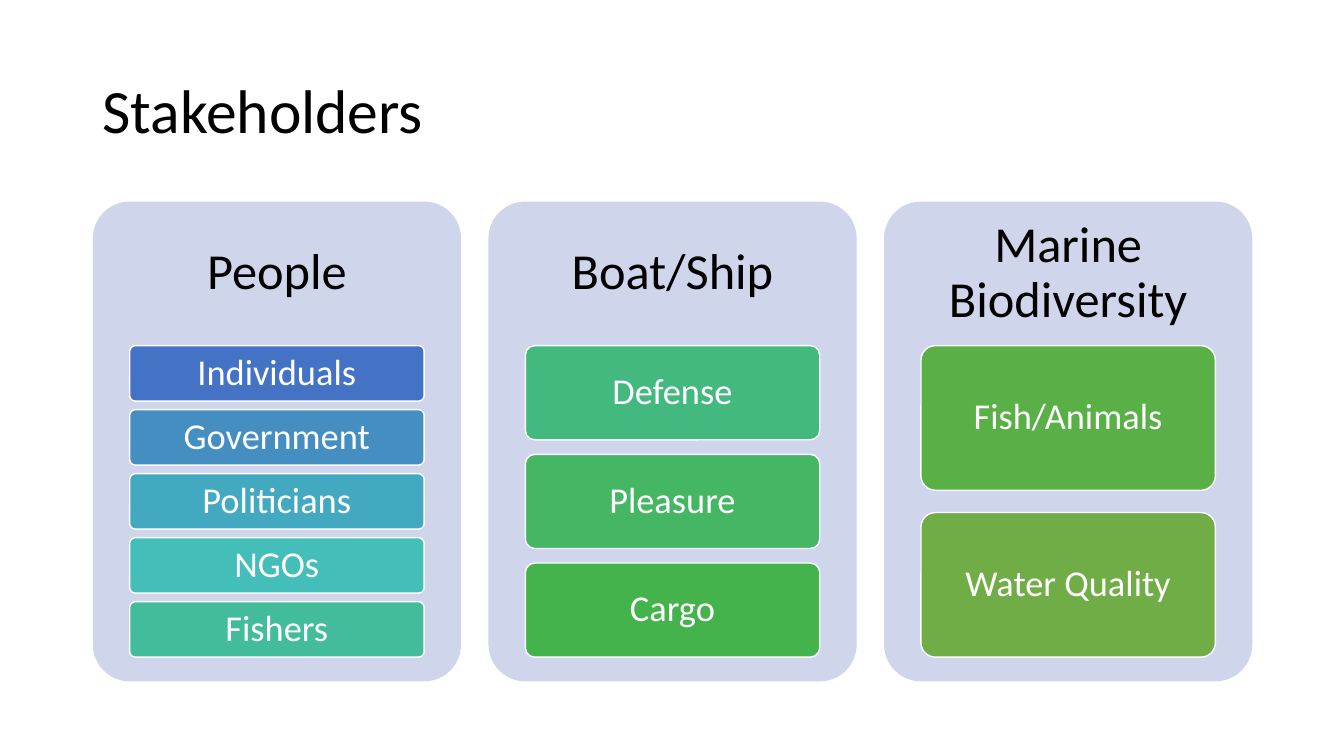
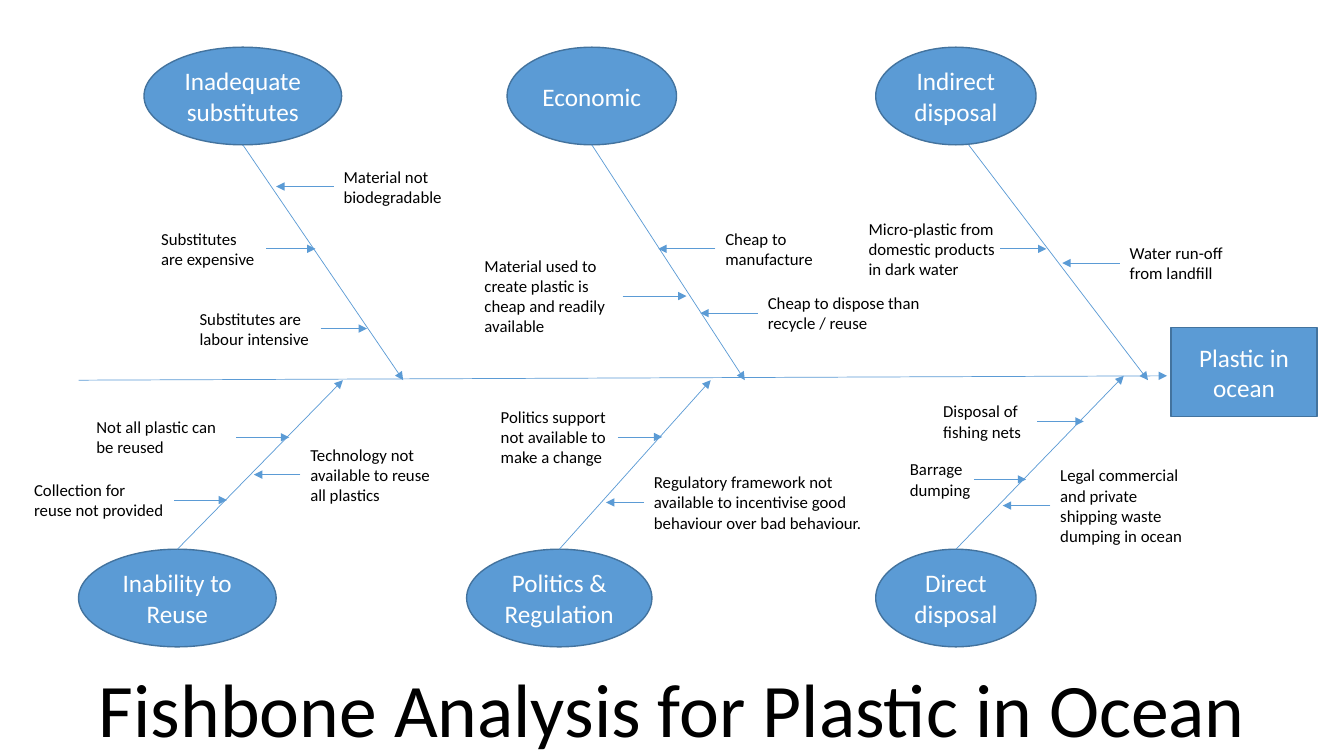
from typing import NamedTuple

from lxml import etree
from pptx import Presentation
from pptx.dml.color import RGBColor
from pptx.enum.shapes import MSO_CONNECTOR, MSO_SHAPE
from pptx.enum.text import MSO_ANCHOR, MSO_AUTO_SIZE, PP_ALIGN
from pptx.oxml.ns import qn
from pptx.util import Cm, Pt

RECTANGLE = MSO_SHAPE.RECTANGLE
ROUNDED = MSO_SHAPE.ROUNDED_RECTANGLE
OVAL = MSO_SHAPE.OVAL
STRAIGHT = MSO_CONNECTOR.STRAIGHT
LEFT, CENTER = PP_ALIGN.LEFT, PP_ALIGN.CENTER
TOP, MIDDLE = MSO_ANCHOR.TOP, MSO_ANCHOR.MIDDLE
NO_FIT = MSO_AUTO_SIZE.NONE

FONT = "Calibri"
BLACK = RGBColor(0x00, 0x00, 0x00)
WHITE = RGBColor(0xFF, 0xFF, 0xFF)
PANEL = RGBColor(0xCF, 0xD5, 0xEA)
BLUE = RGBColor(0x5B, 0x9B, 0xD5)
DARK_BLUE = RGBColor(0x43, 0x73, 0x9E)
ROYAL = RGBColor(0x44, 0x72, 0xC4)
STEEL = RGBColor(0x44, 0x8E, 0xC2)
CYAN = RGBColor(0x43, 0xA9, 0xC0)
TURQUOISE = RGBColor(0x43, 0xBE, 0xB9)
TEAL = RGBColor(0x43, 0xBC, 0x9C)
JADE = RGBColor(0x44, 0xB9, 0x7F)
EMERALD = RGBColor(0x45, 0xB6, 0x64)
GREEN = RGBColor(0x45, 0xB3, 0x4B)
LEAF = RGBColor(0x59, 0xB0, 0x46)
OLIVE = RGBColor(0x70, 0xAD, 0x47)


class Reason(NamedTuple):
    """A note beside a bone; its arrow runs level from the note to tip."""
    text: str
    left: float
    middle: float
    width: float
    lines: int
    tip: float
    tail: float | None = None


class Cause(NamedTuple):
    """An oval whose bone runs from its centre, plus shift, to joint."""
    text: str
    left: float
    width: float
    joint: tuple
    shift: float = 0


STAKEHOLDERS = [
    ("People", [("Individuals", ROYAL), ("Government", STEEL),
                ("Politicians", CYAN), ("NGOs", TURQUOISE),
                ("Fishers", TEAL)]),
    ("Boat/Ship", [("Defense", JADE), ("Pleasure", EMERALD),
                   ("Cargo", GREEN)]),
    ("Marine Biodiversity", [("Fish/Animals", LEAF),
                             ("Water Quality", OLIVE)]),
]

UPPER_CAUSES = [
    Cause("Inadequate substitutes", 3.63, 4.98, (10.16, 9.58)),
    Cause("Economic", 12.78, 4.27, (18.77, 9.58)),
    Cause("Indirect disposal", 22.07, 4.04, (28.93, 9.58), shift=0.32),
]
LOWER_CAUSES = [
    Cause("Inability to Reuse", 1.98, 4.98, (8.64, 9.58)),
    Cause("Politics & Regulation", 11.76, 4.67, (17.91, 9.58)),
    Cause("Direct disposal", 22.07, 4.04, (28.32, 9.47)),
]
REASONS = [
    Reason("Material not biodegradable", 8.41, 4.7, 3.1, 2, 6.96),
    Reason("Substitutes are expensive", 3.81, 6.27, 2.9, 2, 7.95),
    Reason("Substitutes are labour intensive", 4.78, 8.28, 3.3, 2, 9.25),
    Reason("Cheap to manufacture", 18.03, 6.27, 3.1, 2, 16.59),
    Reason("Material used to create plastic is cheap and readily available",
           11.96, 7.46, 3.73, 4, 17.3),
    Reason("Cheap to dispose than recycle / reuse",
           19.1, 7.89, 4.42, 2, 17.65),
    Reason("Micro-plastic from domestic products in dark water",
           21.64, 6.27, 3.73, 3, 26.37, tail=25.2),
    Reason("Water run-off from landfill", 28.22, 6.63, 3.1, 2, 26.77),
    Reason("Not all plastic can be reused", 2.18, 11.02, 3.78, 2, 7.29),
    Reason("Collection for reuse not provided", 0.61, 12.6, 3.78, 2, 5.72),
    Reason("Technology not available to reuse all plastics",
           7.57, 11.96, 3.81, 3, 6.4),
    Reason("Politics support not available to make a change",
           12.37, 11.01, 3.2, 3, 16.69),
    Reason("Regulatory framework not available to incentivise good "
           "behaviour over bad behaviour.", 16.23, 12.66, 5.84, 3, 15.27),
    Reason("Disposal of fishing nets", 23.52, 10.62, 2.62, 2, 27.31),
    Reason("Barrage dumping", 22.68, 12.08, 2.62, 2, 25.86, tail=24.54),
    Reason("Legal commercial and private shipping waste dumping in ocean",
           26.47, 12.74, 3.61, 4, 25.27),
]


def write_text(shape, text, size=12, color=BLACK, align=LEFT, anchor=TOP,
               spacing=1.0, wrap=True, margins=(0.25, 0.13)):
    frame = shape.text_frame
    frame.auto_size = NO_FIT
    frame.word_wrap = wrap
    frame.vertical_anchor = anchor
    frame.margin_left = frame.margin_right = Cm(margins[0])
    frame.margin_top = frame.margin_bottom = Cm(margins[1])
    para = frame.paragraphs[0]
    para.alignment = align
    para.line_spacing = spacing
    span = para.add_run()
    span.text = text
    span.font.name = FONT
    span.font.size = Pt(size)
    span.font.color.rgb = color


class Slides:
    """Holds the deck, the current page and the shared style."""

    def __init__(self):
        self.deck = Presentation()
        self.deck.slide_width = Cm(33.87)
        self.deck.slide_height = Cm(19.05)
        self.page = None

    def add_page(self, title, left, top, width, height, **text_format):
        self.page = self.deck.slides.add_slide(self.deck.slide_layouts[5])
        box = self.page.shapes.title
        box.left, box.top = Cm(left), Cm(top)
        box.width, box.height = Cm(width), Cm(height)
        write_text(box, title, **text_format)

    def shape(self, kind, left, top, width, height, fill, line=None):
        shape = self.page.shapes.add_shape(
            kind, Cm(left), Cm(top), Cm(width), Cm(height))
        shape.shadow.inherit = False
        shape.fill.solid()
        shape.fill.fore_color.rgb = fill
        if line is None:
            shape.line.fill.background()
        else:
            shape.line.color.rgb = line
            shape.line.width = Pt(1)
        if kind == ROUNDED:
            shape.adjustments[0] = 0.1
        return shape

    def label(self, text, left, top, width, height, **text_format):
        box = self.page.shapes.add_textbox(
            Cm(left), Cm(top), Cm(width), Cm(height))
        write_text(box, text, **text_format)

    def node(self, kind, text, left, top, width, height):
        shape = self.shape(kind, left, top, width, height, BLUE, DARK_BLUE)
        write_text(shape, text, size=18, color=WHITE, align=CENTER,
                   anchor=MIDDLE)

    def arrow(self, start, end):
        connector = self.page.shapes.add_connector(
            STRAIGHT, *(Cm(value) for value in (*start, *end)))
        connector.line.color.rgb = BLUE
        connector.line.width = Pt(0.5)
        properties = connector.element.spPr
        etree.SubElement(properties.find(qn("a:ln")), qn("a:tailEnd"),
                         type="triangle")
        etree.SubElement(properties, qn("a:effectLst"))

    def panel(self, heading, bars, left):
        """Draw a heading above bars that share one height and gap."""
        top, width, height, heading_height = 5.08, 9.28, 12.09, 3.63
        bar_inset, bars_height, gap_ratio = 0.93, 7.85, 2 / 13
        self.shape(ROUNDED, left, top, width, height, PANEL)
        self.label(heading, left, top, width, heading_height, size=36,
                   align=CENTER, anchor=MIDDLE, spacing=0.9,
                   margins=(0.38, 0.38))
        bar_height = bars_height / (len(bars) + (len(bars) - 1) * gap_ratio)
        for row, (text, fill) in enumerate(bars):
            bar_top = top + heading_height + row * bar_height * (1 + gap_ratio)
            bar = self.shape(ROUNDED, left + bar_inset, bar_top,
                             width - 2 * bar_inset, bar_height, fill, WHITE)
            write_text(bar, text, size=26, color=WHITE, align=CENTER,
                       anchor=MIDDLE, spacing=0.9, margins=(0.18, 0.13))

    def cause(self, cause, top, foot_y):
        self.node(OVAL, cause.text, cause.left, top, cause.width, 2.46)
        foot_x = cause.left + cause.width / 2 + cause.shift
        self.arrow((foot_x, foot_y), cause.joint)

    def reason(self, reason):
        height = 0.26 + 0.51 * reason.lines
        self.label(reason.text, reason.left, reason.middle - height / 2,
                   reason.width, height)
        tail = reason.tail
        if tail is None:
            points_right = reason.tip > reason.left
            tail = reason.left + (reason.width if points_right else 0)
        self.arrow((tail, reason.middle), (reason.tip, reason.middle))


def add_stakeholders(slides):
    slides.add_page("Stakeholders", 2.33, 1.02, 29.21, 3.68, size=44,
                    anchor=MIDDLE, spacing=0.9)
    for column, (heading, bars) in enumerate(STAKEHOLDERS):
        slides.panel(heading, bars, 2.34 + column * 9.97)


def add_fishbone(slides):
    slides.add_page("Fishbone Analysis for Plastic in Ocean",
                    2.08, 16.56, 29.72, 2.57, size=54, align=CENTER,
                    wrap=False)
    slides.arrow((1.98, 9.58), (29.41, 9.47))
    slides.node(RECTANGLE, "Plastic in ocean", 29.51, 8.26, 3.68, 2.24)
    for cause in UPPER_CAUSES:
        slides.cause(cause, top=1.19, foot_y=3.65)
    for cause in LOWER_CAUSES:
        slides.cause(cause, top=13.84, foot_y=13.84)
    for reason in REASONS:
        slides.reason(reason)


def main():
    slides = Slides()
    add_stakeholders(slides)
    add_fishbone(slides)
    slides.deck.save("out.pptx")


if __name__ == "__main__":
    main()
